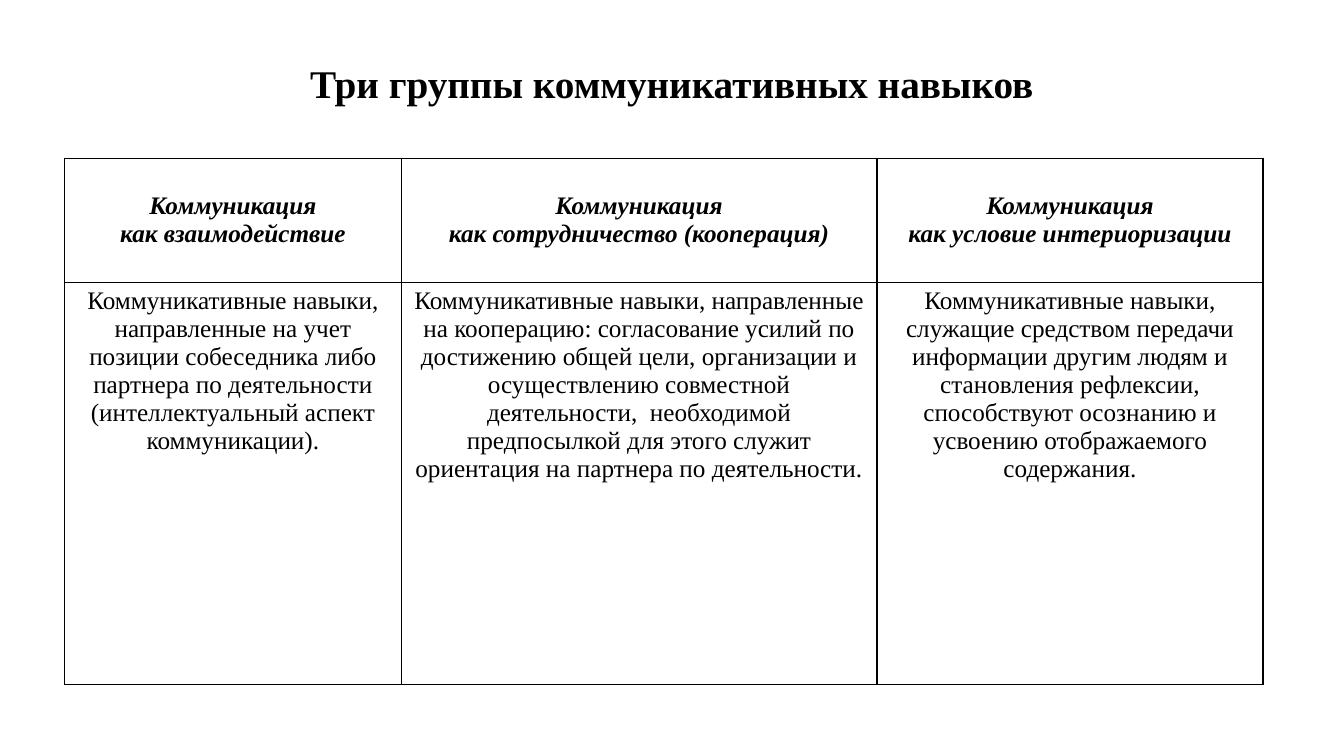
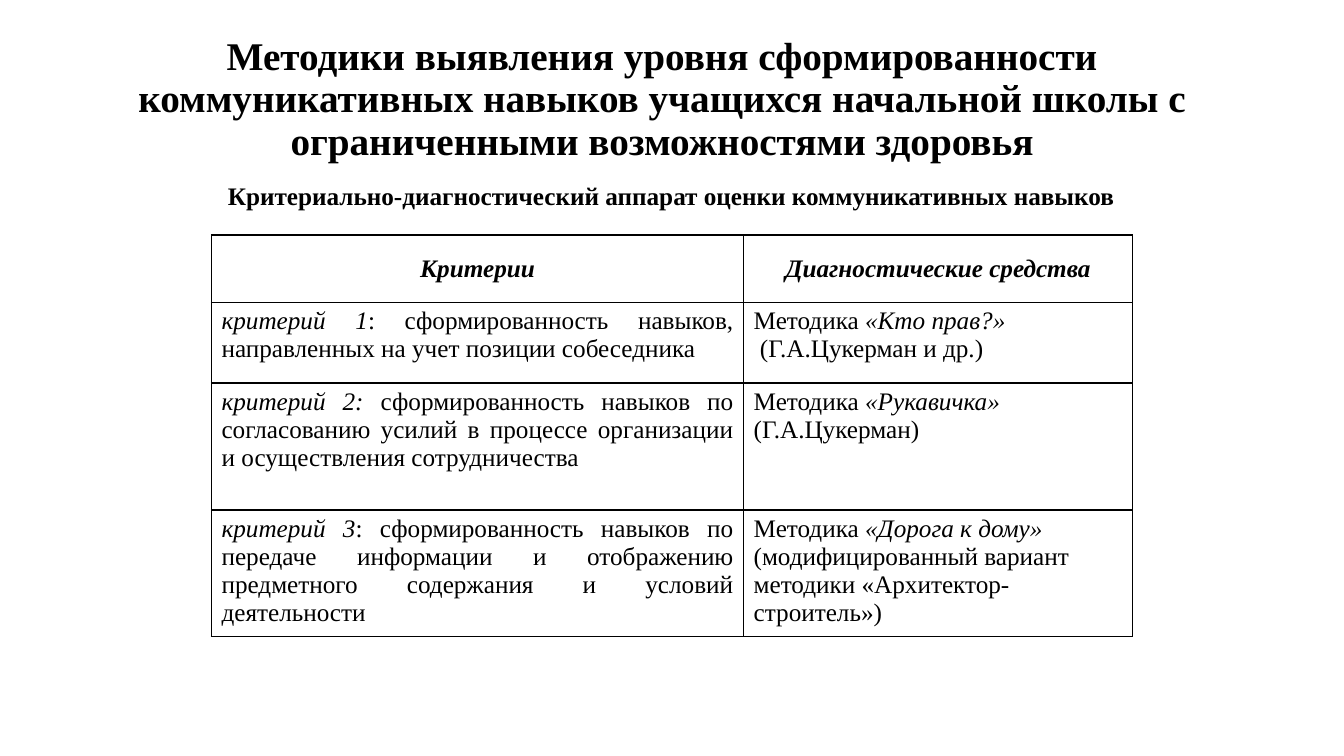
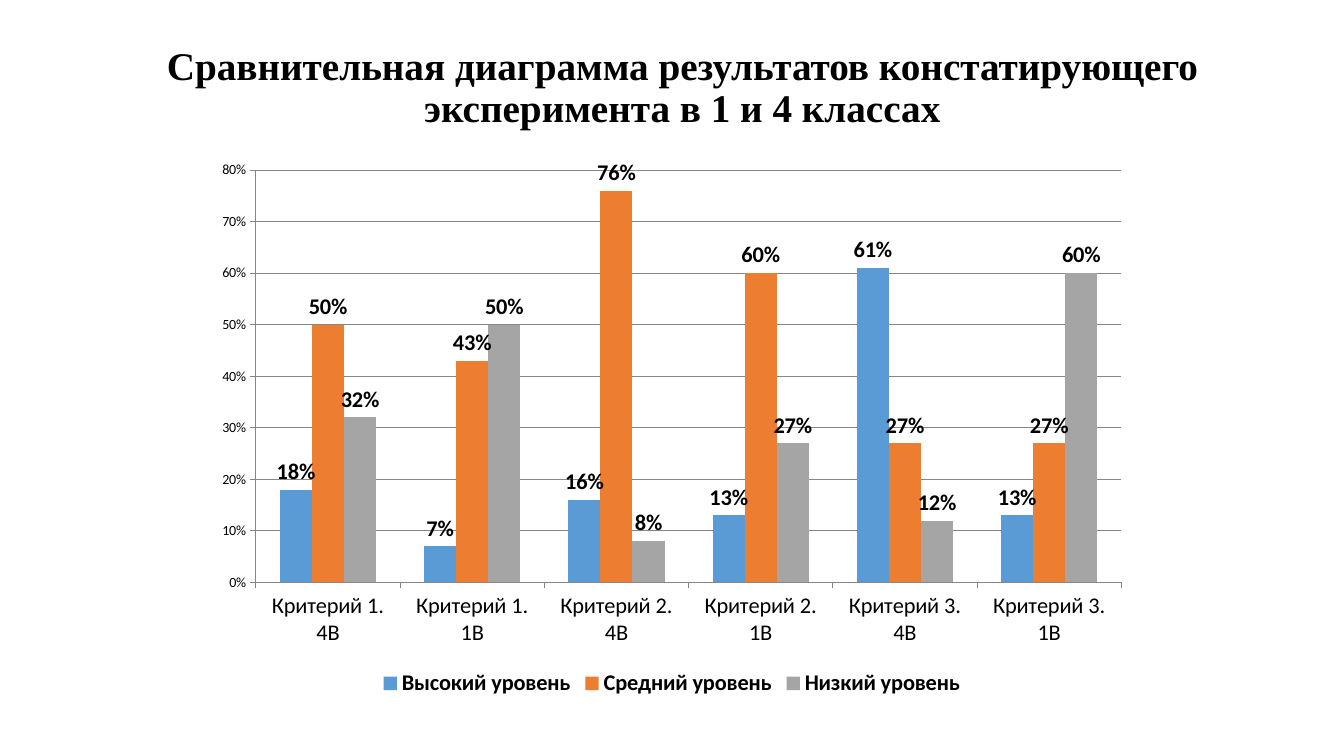
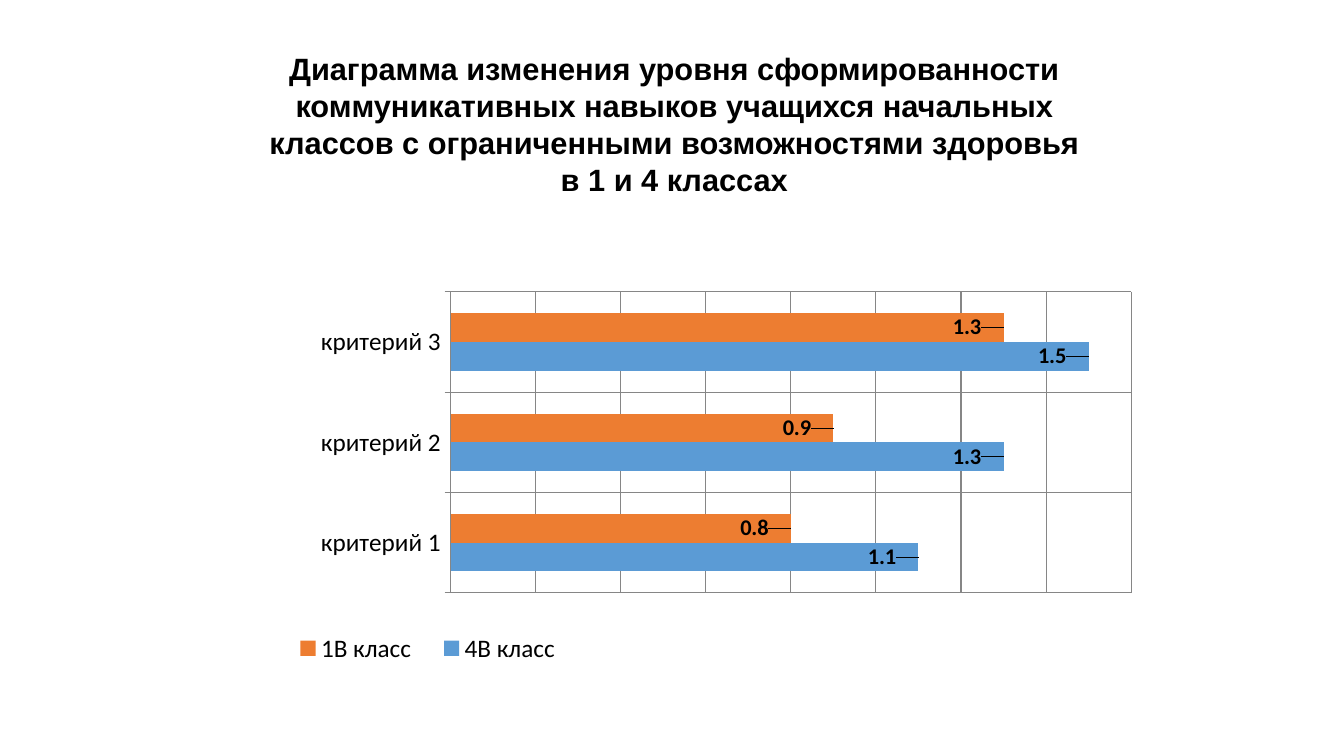
from dataclasses import dataclass

from lxml import etree
from pptx import Presentation
from pptx import util as u
from pptx.chart.data import CategoryChartData
from pptx.dml.color import RGBColor
from pptx.enum import chart as ch
from pptx.enum import text
from pptx.oxml import ns

# Shared look
BLACK, GRID = "000000", "868686"
BLUE, ORANGE, GREY = "5B9BD5", "ED7D31", "A5A5A5"
SERIF, SANS, CHART_FONT = "Times New Roman", "Arial", "Calibri"
LEFT, CENTER, JUSTIFY = text.PP_ALIGN.LEFT, text.PP_ALIGN.CENTER, text.PP_ALIGN.JUSTIFY
TITLE_ONLY = 5


@dataclass(frozen=True)
class Box:
    """Place and size in centimetres."""
    left: float
    top: float
    width: float
    height: float

    def lengths(self) -> tuple:
        return tuple(u.Cm(n) for n in (self.left, self.top, self.width, self.height))


@dataclass(frozen=True)
class Span:
    words: str
    bold: bool = False
    italic: bool = False


@dataclass(frozen=True)
class CellText:
    paras: tuple
    align: int = LEFT
    header: bool = False


@dataclass(frozen=True)
class Level:
    name: str
    values: tuple
    color: str


def rgb(color: str) -> RGBColor:
    return RGBColor.from_string(color)


def style_font(font, size: float, name: str, bold: bool = False, italic: bool = False) -> None:
    font.size, font.name, font.bold, font.italic = u.Pt(size), name, bold, italic
    font.color.rgb = rgb(BLACK)


def add_span(para, span: Span, size: float, name: str = SERIF) -> None:
    run = para.add_run()
    run.text = span.words
    style_font(run.font, size, name, span.bold, span.italic)


def add_heading(page, words: str, box: Box, size: float = 28, name: str = SERIF,
                spacing: float = 0.9) -> None:
    title = page.shapes.title
    title.left, title.top, title.width, title.height = box.lengths()
    frame = title.text_frame
    frame.word_wrap, frame.auto_size = True, text.MSO_AUTO_SIZE.NONE
    frame.vertical_anchor = text.MSO_ANCHOR.MIDDLE
    para = frame.paragraphs[0]
    para.alignment, para.line_spacing = CENTER, spacing
    add_span(para, Span(words, bold=True), size, name)


# Tables
def header(*lines: str) -> CellText:
    return CellText(tuple((Span(line, True, True),) for line in lines), CENTER, True)


def criterion(label: str, words: str) -> CellText:
    return CellText(((Span(label, italic=True), Span(words)),), JUSTIFY)


def add_borders(cell) -> None:
    props = cell._tc.get_or_add_tcPr()
    for side in ("a:lnL", "a:lnR", "a:lnT", "a:lnB"):
        line = etree.SubElement(props, ns.qn(side), w=str(u.Pt(1)))
        fill = etree.SubElement(line, ns.qn("a:solidFill"))
        etree.SubElement(fill, ns.qn("a:srgbClr"), val=BLACK)


def fill_cell(cell, content: CellText) -> None:
    add_borders(cell)
    cell.fill.background()
    if content.header:
        cell.vertical_anchor = text.MSO_ANCHOR.MIDDLE
    for i, spans in enumerate(content.paras):
        frame = cell.text_frame
        para = frame.add_paragraph() if i else frame.paragraphs[0]
        para.alignment = content.align
        for span in spans:
            add_span(para, span, 18)


def add_grid(page, left: float, top: float, widths: tuple, heights: tuple, rows: list):
    box = Box(left, top, sum(widths), sum(heights))
    table = page.shapes.add_table(len(heights), len(widths), *box.lengths()).table
    table.first_row = table.horz_banding = False
    for column, width in zip(table.columns, widths):
        column.width = u.Cm(width)
    for row, height, contents in zip(table.rows, heights, rows):
        row.height = u.Cm(height)
        for cell, content in zip(row.cells, contents):
            fill_cell(cell, content)
    return table


# Charts
def set_layout(parent, index: int, inner: bool = False, **fractions: float) -> None:
    for old in parent.findall(ns.qn("c:layout")):
        parent.remove(old)
    layout = etree.Element(ns.qn("c:layout"))
    parent.insert(index, layout)
    manual = etree.SubElement(layout, ns.qn("c:manualLayout"))
    settings = {"layoutTarget": "inner"} if inner else {}
    if "w" in fractions:
        settings.update(xMode="edge", yMode="edge")
    settings.update(fractions)
    for tag, value in settings.items():
        etree.SubElement(manual, ns.qn(f"c:{tag}"), val=str(value))


def add_bars(page, kind: int, box: Box, categories: tuple, levels: tuple,
             number_format: str, axis_size: float, legend_bold: bool,
             top_value: float, step: float, label_place: int):
    data = CategoryChartData(number_format=number_format)
    data.categories = categories
    for level in levels:
        data.add_series(level.name, level.values)
    chart = page.shapes.add_chart(kind, *box.lengths(), data).chart
    style_font(chart.font, 10, CHART_FONT)
    chart.has_title = False

    chart.has_legend = True
    chart.legend.position = ch.XL_LEGEND_POSITION.BOTTOM
    chart.legend.include_in_layout = False
    style_font(chart.legend.font, axis_size, CHART_FONT, legend_bold)

    for axis in (chart.category_axis, chart.value_axis):
        axis.major_tick_mark = ch.XL_TICK_MARK.OUTSIDE
        axis.format.line.color.rgb = rgb(GRID)
    style_font(chart.category_axis.tick_labels.font, axis_size, CHART_FONT)
    values = chart.value_axis
    values.minimum_scale, values.maximum_scale, values.major_unit = 0, top_value, step
    values.major_gridlines.format.line.color.rgb = rgb(GRID)
    values.tick_labels.number_format = number_format
    values.tick_labels.number_format_is_linked = False

    plot = chart.plots[0]
    plot.gap_width, plot.overlap, plot.vary_by_categories = 150, 0, False
    for series, level in zip(plot.series, levels):
        series.format.fill.solid()
        series.format.fill.fore_color.rgb = rgb(level.color)
        labels = series.data_labels
        labels.show_value, labels.position = True, label_place
        labels.number_format, labels.number_format_is_linked = number_format, False
        style_font(labels.font, 16, CHART_FONT, bold=True)
    return chart


# Slides
def skills_slide(page) -> None:
    add_heading(page, "Три группы коммуникативных навыков", Box(5.33, 1.27, 23.19, 1.78))
    heads = ("как взаимодействие", "как сотрудничество (кооперация)",
             "как условие интериоризации")
    bodies = (
        "Коммуникативные навыки, направленные на учет позиции собеседника либо "
        "партнера по деятельности (интеллектуальный аспект коммуникации).",
        "Коммуникативные навыки, направленные на кооперацию: согласование усилий по "
        "достижению общей цели, организации и осуществлению совместной деятельности,  "
        "необходимой предпосылкой для этого служит ориентация на партнера по "
        "деятельности.",
        "Коммуникативные навыки, служащие средством передачи информации другим людям и "
        "становления рефлексии, способствуют осознанию и усвоению отображаемого "
        "содержания.")
    rows = [[header("Коммуникация", head) for head in heads],
            [CellText(((Span(body),),), CENTER) for body in bodies]]
    table = add_grid(page, 1.63, 3.99, (8.48, 11.99, 9.73), (3.12, 10.13), rows)
    for cell in table.rows[0].cells:
        cell.margin_left = cell.margin_right = u.Cm(0.18)
        cell.margin_top = cell.margin_bottom = 0


def methods_slide(page) -> None:
    add_heading(page, "Методики выявления уровня сформированности коммуникативных навыков "
                "учащихся начальной школы с ограниченными возможностями здоровья",
                Box(1.4, 0.53, 30.56, 3.99))
    method = Span("Методика ")
    rows = [
        [header("Критерии"), header("Диагностические средства")],
        [criterion("критерий 1", ": сформированность навыков, направленных на учет "
                   "позиции собеседника"),
         CellText(((method, Span("«Кто прав?»", italic=True)),
                   (Span(" (Г.А.Цукерман и др.)"),)))],
        [criterion("критерий 2:", " сформированность навыков по согласованию усилий в "
                   "процессе организации и осуществления сотрудничества"),
         CellText(((method, Span("«Рукавичка» ", italic=True), Span("(Г.А.Цукерман)")),))],
        [criterion("критерий 3", ": сформированность навыков по передаче информации и "
                   "отображению предметного содержания и условий деятельности"),
         CellText(((method, Span("«Дорога к дому»", italic=True)),
                   (Span("(модифицированный вариант методики «Архитектор-строитель»)"),)))],
    ]
    add_grid(page, 5.33, 5.92, (13.41, 9.8), (1.7, 2.03, 3.2, 3.18), rows)

    subtitle = page.shapes.add_textbox(*Box(4.52, 4.42, 24.79, 1.02).lengths()).text_frame
    subtitle.word_wrap = True
    para = subtitle.paragraphs[0]
    para.alignment = CENTER
    add_span(para, Span("Критериально-диагностический аппарат оценки коммуникативных "
                        "навыков", bold=True), 18)


def comparison_slide(page) -> None:
    add_heading(page, "Сравнительная диаграмма результатов констатирующего эксперимента "
                "в 1 и 4 классах", Box(2.64, 0.64, 29.11, 3.18))
    categories = tuple(f"Критерий {n}. {group}" for n in (1, 2, 3) for group in ("4В", "1В"))
    levels = (Level("Высокий уровень", (0.18, 0.07, 0.16, 0.13, 0.61, 0.13), BLUE),
              Level("Средний уровень", (0.5, 0.43, 0.76, 0.6, 0.27, 0.27), ORANGE),
              Level("Низкий уровень", (0.32, 0.5, 0.08, 0.27, 0.12, 0.6), GREY))
    add_bars(page, ch.XL_CHART_TYPE.COLUMN_CLUSTERED, Box(5.13, 3.81, 23.6, 13.87),
             categories, levels, "0%", 16, True, 0.8, 0.1,
             ch.XL_LABEL_POSITION.OUTSIDE_END)


def change_slide(page) -> None:
    add_heading(page, "Диаграмма изменения уровня сформированности коммуникативных навыков "
                "учащихся начальных классов с ограниченными возможностями здоровья в "
                "1 и 4 классах", Box(6.2, 1.07, 21.59, 4.09), 22, SANS, 1.0)
    levels = (Level("4В класс", (1.1, 1.3, 1.5), BLUE),
              Level("1В класс", (0.8, 0.9, 1.3), ORANGE))
    inside = ch.XL_LABEL_POSITION.INSIDE_END
    chart = add_bars(page, ch.XL_CHART_TYPE.BAR_CLUSTERED, Box(5.33, 5.33, 23.19, 12.65),
                     tuple(f"критерий {n}" for n in (1, 2, 3)), levels, "General", 18,
                     False, 1.6, 0.2, inside)
    chart.value_axis.visible = False
    chart.category_axis.has_major_gridlines = True
    chart.category_axis.major_gridlines.format.line.color.rgb = rgb(GRID)

    # Fixed plot and legend places
    space = chart._chartSpace
    set_layout(next(space.iter(ns.qn("c:plotArea"))), 0, True, x=0.26, y=0.16, w=0.74, h=0.6)
    set_layout(next(space.iter(ns.qn("c:legend"))), 1, x=0.07, y=0.83, w=0.33, h=0.08)

    # Value labels sit a little further inside the bars
    for series, level in zip(chart.plots[0].series, levels):
        for i in range(len(level.values)):
            label = series.points[i].data_label
            style_font(label.font, 16, CHART_FONT, bold=True)
            label.position = inside
    for label in space.iter(ns.qn("c:dLbl")):
        set_layout(label, 1, x=-0.02, y=0)


def main() -> None:
    deck = Presentation()
    deck.slide_width, deck.slide_height = u.Cm(33.87), u.Cm(19.05)
    for build in (skills_slide, methods_slide, comparison_slide, change_slide):
        build(deck.slides.add_slide(deck.slide_layouts[TITLE_ONLY]))
    deck.save("out.pptx")


if __name__ == "__main__":
    main()
